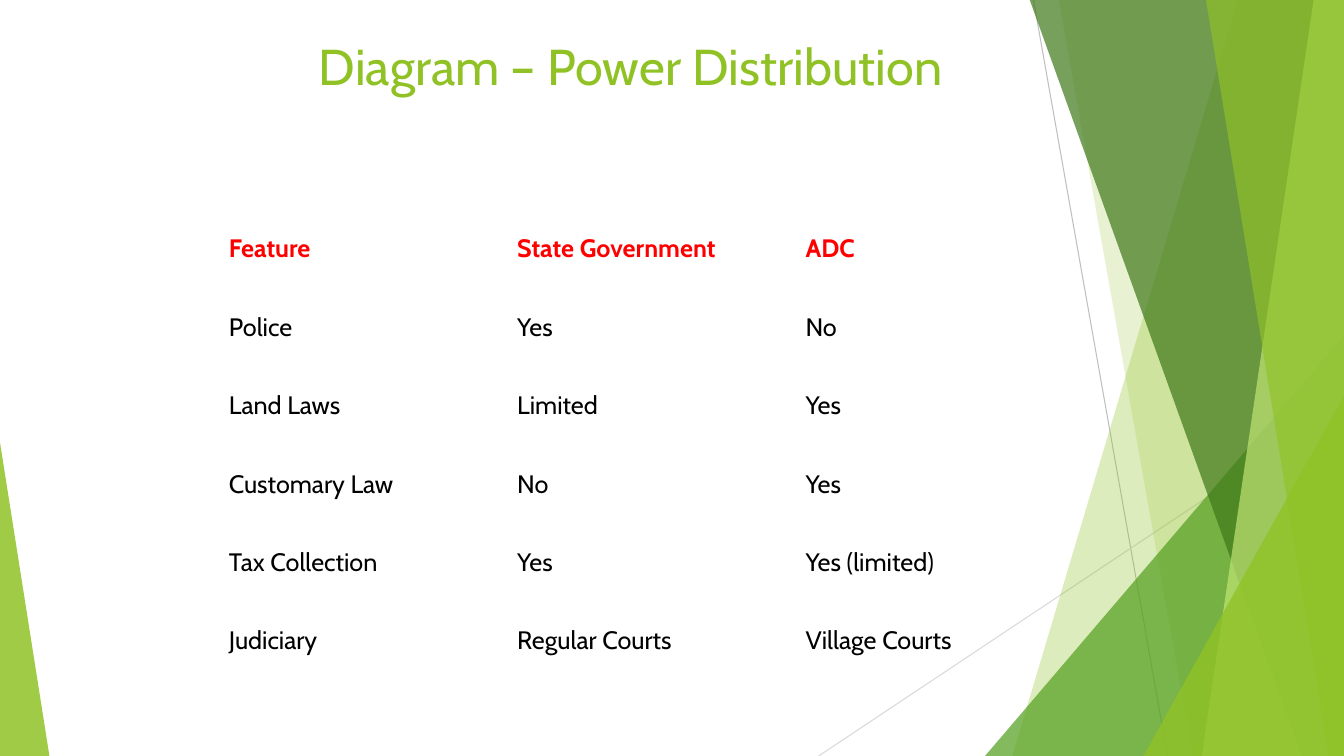
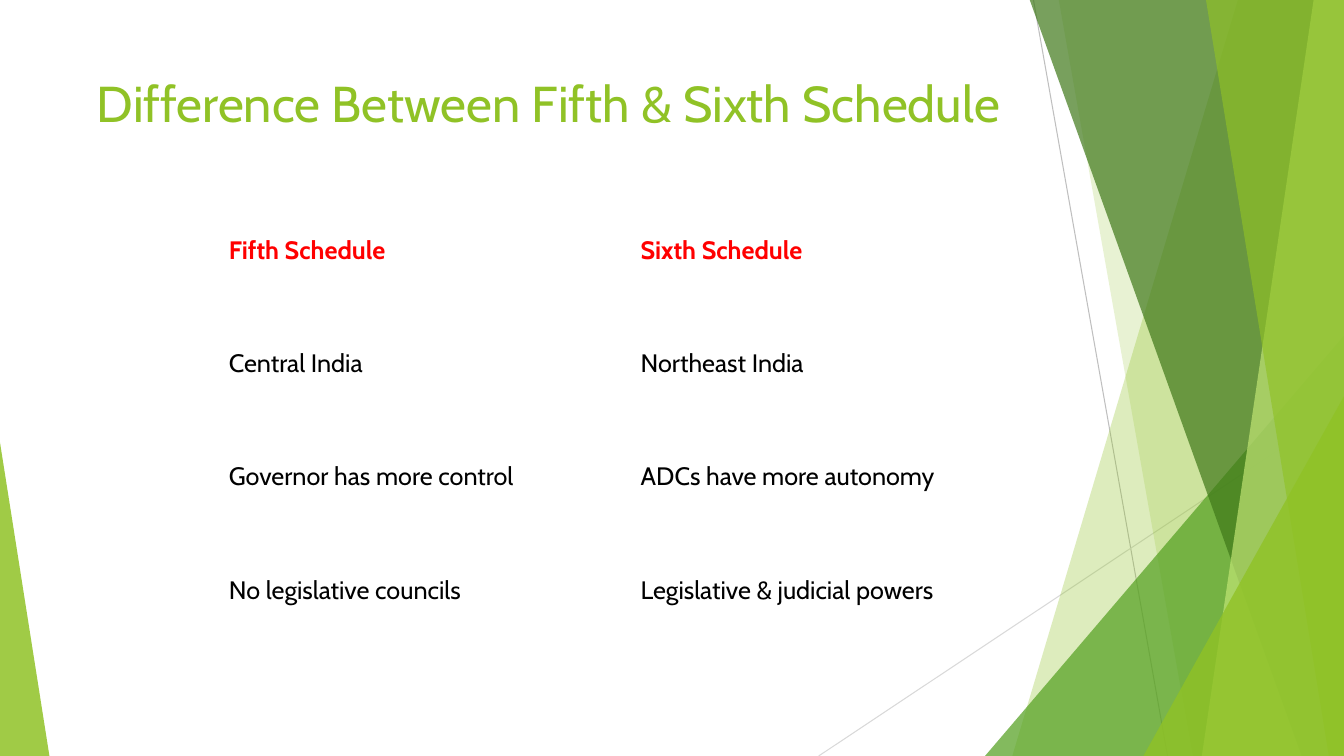
from dataclasses import dataclass

from lxml.etree import SubElement
from pptx import Presentation
from pptx.dml.color import RGBColor
from pptx.enum.shapes import MSO_CONNECTOR, MSO_SHAPE
from pptx.enum.text import MSO_ANCHOR, MSO_AUTO_SIZE, PP_ALIGN
from pptx.oxml.ns import qn
from pptx.util import Inches, Pt


@dataclass(frozen=True)
class Theme:
    font: str = "Cabin"
    title_size: int = 36
    table_size: int = 18
    green: str = "90C226"
    mid_green: str = "54A021"
    dark_green: str = "3F7819"
    pale_green: str = "C0E474"
    header: str = "FF0000"
    body: str = "000000"
    dark_line: str = "BFBFBF"
    light_line: str = "D9D9D9"


THEME = Theme()
WIDTH, HEIGHT = 13.33, 7.5
BAND_TOP = -0.01
TITLE_ONLY_LAYOUT = 5
NO_STYLE_NO_GRID = "{2D5ABB26-0587-4C30-8999-92F81FD0307C}"


def style_font(paragraph, size, color, bold=False):
    font = paragraph.font
    font.name = THEME.font
    font.size = Pt(size)
    font.bold = bold
    font.color.rgb = RGBColor.from_string(color)


# Decoration
def fill_translucent(shape, color, opacity):
    shape.shadow.inherit = False
    shape.fill.solid()
    shape.fill.fore_color.rgb = RGBColor.from_string(color)
    shape.line.fill.background()
    color_element = shape.element.spPr.find(".//" + qn("a:srgbClr"))
    SubElement(color_element, qn("a:alpha"), val=str(opacity * 1000))


def add_hairline(group, start, end, color):
    points = [Inches(value) for value in (*start, *end)]
    line = group.shapes.add_connector(MSO_CONNECTOR.STRAIGHT, *points)
    line.line.width = Pt(0.75)
    line.line.color.rgb = RGBColor.from_string(color)
    SubElement(line.element.spPr, qn("a:effectLst"))


def add_band(group, top_x, bottom_x, color, opacity):
    """Band from a slanted left edge to the right edge of the slide."""
    corners = [(top_x, BAND_TOP), (WIDTH, BAND_TOP), (WIDTH, HEIGHT), (bottom_x, HEIGHT)]
    start, *others = [(Inches(x), Inches(y)) for x, y in corners]
    builder = group.shapes.build_freeform(*start)
    builder.add_line_segments(others, close=True)
    fill_translucent(builder.convert_to_shape(), color, opacity)


def add_corner(group, left, right, top, apex, color, opacity):
    """Triangle standing on the bottom edge of the slide."""
    triangle = group.shapes.add_shape(
        MSO_SHAPE.ISOSCELES_TRIANGLE,
        Inches(left), Inches(top), Inches(right - left), Inches(HEIGHT - top))
    triangle.adjustments[0] = apex
    fill_translucent(triangle, color, opacity)


def decorate_layout(layout, slide):
    """Draw the decoration once and move it to the layout, behind the text."""
    group = slide.shapes.add_group_shape()
    add_hairline(group, (10.25, 0), (11.58, HEIGHT), THEME.dark_line)
    add_hairline(group, (WIDTH, 4.03), (8.12, HEIGHT), THEME.light_line)
    add_band(group, 12.28, 10.04, THEME.green, 30)
    add_band(group, 10.5, 11.83, THEME.green, 20)
    add_corner(group, 9.77, WIDTH, 3.33, 1, THEME.mid_green, 72)
    add_band(group, 10.21, 12.91, THEME.dark_green, 70)
    add_band(group, 13.03, 11.92, THEME.pale_green, 70)
    add_band(group, 11.96, 13.18, THEME.green, 65)
    add_corner(group, 11.34, WIDTH, 3.93, 1, THEME.green, 80)
    add_corner(group, 0, 0.49, 4.39, 0, THEME.green, 85)
    layout.shapes.element.insert(2, group.element)


# Content
def set_title(slide, text, left, top, width, height):
    title = slide.shapes.title
    title.left, title.top = Inches(left), Inches(top)
    title.width, title.height = Inches(width), Inches(height)
    frame = title.text_frame
    frame.text = text
    frame.word_wrap = True
    frame.auto_size = MSO_AUTO_SIZE.NONE
    frame.vertical_anchor = MSO_ANCHOR.TOP
    paragraph = frame.paragraphs[0]
    paragraph.alignment = PP_ALIGN.CENTER
    style_font(paragraph, THEME.title_size, THEME.green)


def add_plain_table(slide, rows, left, top, width, height):
    frame = slide.shapes.add_table(
        len(rows), len(rows[0]),
        Inches(left), Inches(top), Inches(width), Inches(height))
    frame.element.find(".//" + qn("a:tableStyleId")).text = NO_STYLE_NO_GRID
    table = frame.table
    table.horz_banding = False
    for row_index, row in enumerate(rows):
        is_header = row_index == 0
        color = THEME.header if is_header else THEME.body
        for column_index, text in enumerate(row):
            cell = table.cell(row_index, column_index)
            cell.text = text
            cell.fill.background()
            cell.vertical_anchor = MSO_ANCHOR.MIDDLE
            style_font(cell.text_frame.paragraphs[0], THEME.table_size, color, is_header)


# Slides
def fill_power_slide(slide):
    set_title(slide, "Diagram – Power Distribution", 2.17, 0.3, 8.17, 0.95)
    rows = [
        ("Feature", "State Government", "ADC"),
        ("Police", "Yes", "No"),
        ("Land Laws", "Limited", "Yes"),
        ("Customary Law", "No", "Yes"),
        ("Tax Collection", "Yes", "Yes (limited)"),
        ("Judiciary", "Regular Courts", "Village Courts"),
    ]
    add_plain_table(slide, rows, 2.17, 2.08, 8.58, 4.67)


def fill_schedule_slide(slide):
    set_title(slide, "Difference Between Fifth & Sixth Schedule", 0.74, 0.67, 9.4, 1.44)
    rows = [
        ("Fifth Schedule", "Sixth Schedule"),
        ("Central India", "Northeast India"),
        ("Governor has more control", "ADCs have more autonomy"),
        ("No legislative councils", "Legislative & judicial powers"),
    ]
    add_plain_table(slide, rows, 2.17, 1.92, 8.17, 4.5)


def main():
    presentation = Presentation()
    presentation.slide_width = Inches(WIDTH)
    presentation.slide_height = Inches(HEIGHT)
    layout = presentation.slide_layouts[TITLE_ONLY_LAYOUT]
    power_slide = presentation.slides.add_slide(layout)
    schedule_slide = presentation.slides.add_slide(layout)
    decorate_layout(layout, power_slide)
    fill_power_slide(power_slide)
    fill_schedule_slide(schedule_slide)
    presentation.save("out.pptx")


if __name__ == "__main__":
    main()
